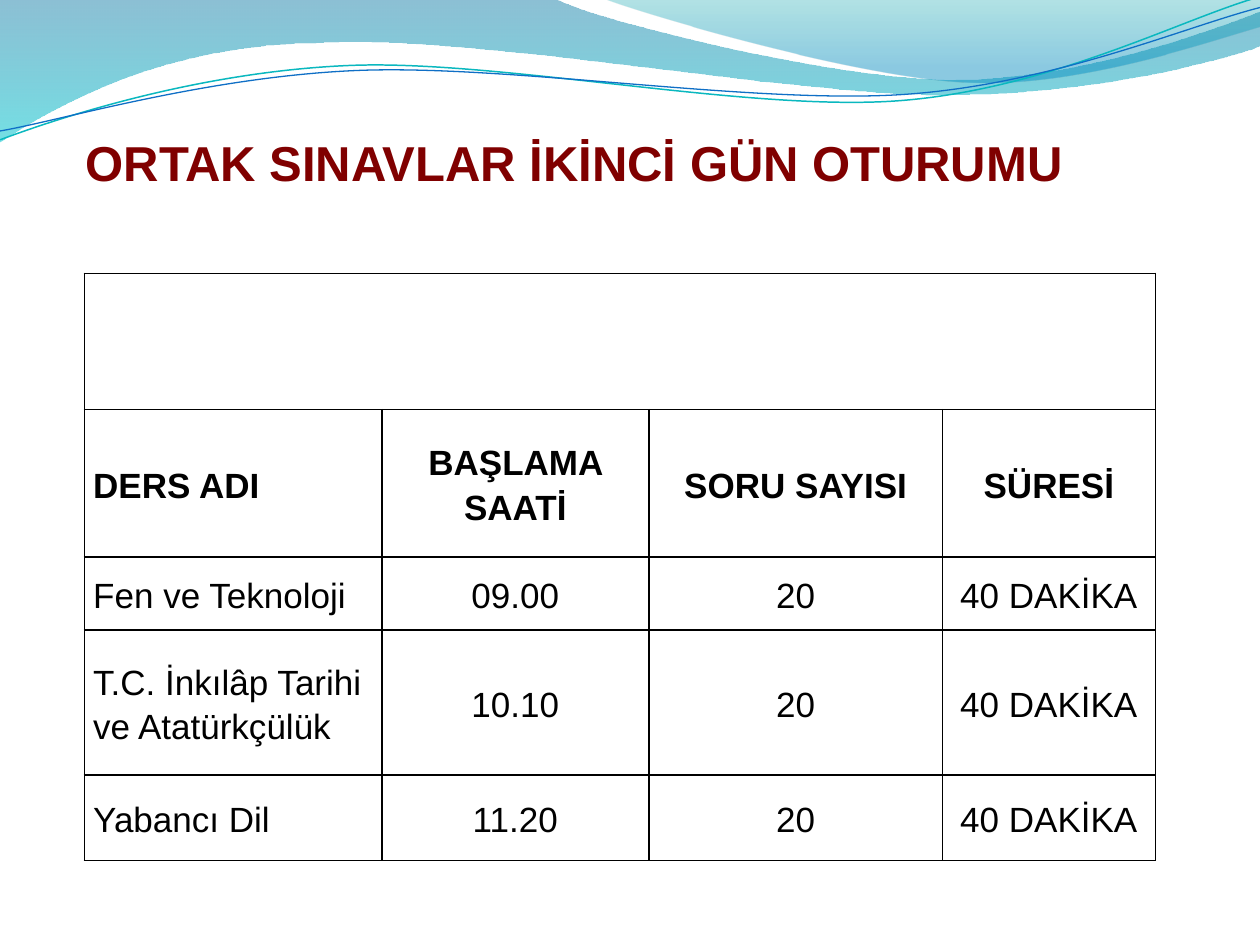
from dataclasses import dataclass
from math import cos, radians, sin

from lxml import etree
from pptx import Presentation
from pptx.dml.color import RGBColor
from pptx.enum.text import MSO_ANCHOR, MSO_AUTO_SIZE, PP_ALIGN
from pptx.oxml.ns import qn
from pptx.util import Inches, Pt

LEFT, CENTER = PP_ALIGN.LEFT, PP_ALIGN.CENTER
TOP, MIDDLE = MSO_ANCHOR.TOP, MSO_ANCHOR.MIDDLE
FIT_SHAPE = MSO_AUTO_SIZE.SHAPE_TO_FIT_TEXT
TITLE_ONLY = 5
CURVE_TILT = 357.3


@dataclass(frozen=True)
class Theme:
    font: str = "Arial"
    title_color: str = "800000"
    ink: str = "000000"
    teal_line: str = "0AB8BF"
    blue_line: str = "0F6FC6"
    wide_wave: tuple = ((0, "0074A1", 45), (1, "00C6CF", 55))
    right_wave: tuple = ((0, "00A1A9", 30), (0.8, "008BBF", 45))
    title_size: int = 28
    table_size: int = 20
    border: float = 1


WIDE_WAVE = [
    (0, -0.01), (4.4, -0.01),
    (4.76, 0.17, 6.64, 0.63, 7.58, 0.63), (8.53, 0.63, 9.58, 0.26, 10, 0.09),
    (10.01, 0.36),
    (9.83, 0.44, 8.7, 0.76, 7.46, 0.75), (6.22, 0.75, 3.82, 0.28, 2.57, 0.34),
    (1.29, 0.35, 0.46, 0.83, -0.01, 1.13), (0, -0.01),
]
RIGHT_WAVE = [
    (4.79, -0.01),
    (5.09, 0.11, 6.82, 0.62, 7.69, 0.65), (8.56, 0.69, 9.61, 0.32, 10, 0.21),
    (10, 0), (4.79, -0.01),
]
TEAL_CURVE = [
    (0, 1.11),
    (0.48, 0.93, 1.58, 0.57, 2.77, 0.52), (3.95, 0.47, 5.93, 0.89, 7.13, 0.8),
    (8.33, 0.71, 9.38, 0.15, 9.98, -0.02),
]
BLUE_CURVE = [
    (0, 1.04),
    (0.47, 0.96, 1.64, 0.61, 2.83, 0.56), (4.03, 0.51, 5.97, 0.83, 7.17, 0.75),
    (8.36, 0.67, 9.41, 0.21, 10, 0.06),
]
COLUMN_WIDTHS = [2.36, 2.12, 2.33, 1.69]
ROW_HEIGHTS = [1.08, 1.17, 0.58, 1.15, 0.68]
EXAM_ROWS = [
    ("DERS ADI", "BAŞLAMA SAATİ", "SORU SAYISI", "SÜRESİ"),
    ("Fen ve Teknoloji", "09.00", "20", "40 DAKİKA"),
    ("T.C. İnkılâp Tarihi ve Atatürkçülük", "10.10", "20", "40 DAKİKA"),
    ("Yabancı Dil", "11.20", "20", "40 DAKİKA"),
]


def level(steps, center):
    angle = radians(360 - CURVE_TILT)
    middle_x, middle_y = center
    result = []
    for step in steps:
        flat = []
        for x, y in zip(step[::2], step[1::2]):
            across, down = x - middle_x, y - middle_y
            flat.append(middle_x + across * cos(angle) - down * sin(angle))
            flat.append(middle_y + across * sin(angle) + down * cos(angle))
        result.append(tuple(flat))
    return result


class SlideBuilder:
    """Holds the theme and the current slide and draws each kind of element."""

    def __init__(self, slide, theme):
        self.slide = slide
        self.theme = theme

    def style(self, para, size, color, bold):
        para.font.name = self.theme.font
        para.font.size = Pt(size)
        para.font.bold = bold
        para.font.color.rgb = RGBColor.from_string(color)

    def outline(self, steps, close):
        points = [(Inches(step[-2]), Inches(step[-1])) for step in steps]
        builder = self.slide.shapes.build_freeform(*points[0])
        builder.add_line_segments(points[1:], close=close)
        shape = builder.convert_to_shape()
        shape.shadow.inherit = False
        segments = list(shape._element.spPr.iter(qn("a:lnTo")))
        for segment, step in zip(segments, steps[1:]):
            if len(step) == 2:
                continue
            bend = etree.Element(qn("a:cubicBezTo"))
            for x, y in zip(step[::2], step[1::2]):
                etree.SubElement(
                    bend, qn("a:pt"),
                    x=str(Inches(x) - shape.left), y=str(Inches(y) - shape.top),
                )
            segment.getparent().replace(segment, bend)
        return shape

    def wave(self, steps, stops):
        shape = self.outline(steps, True)
        shape.line.fill.background()
        shape.fill.gradient()
        shape.fill.gradient_angle = 270
        for stop, (position, color, _) in zip(shape.fill.gradient_stops, stops):
            stop.position = position
            stop.color.rgb = RGBColor.from_string(color)
        colors = shape._element.spPr.iter(qn("a:srgbClr"))
        for element, (_, _, opacity) in zip(colors, stops):
            etree.SubElement(element, qn("a:alpha"), val=str(opacity * 1000))

    def curve(self, steps, center, color, width):
        shape = self.outline(level(steps, center), False)
        shape.rotation = CURVE_TILT
        shape.fill.background()
        shape.line.color.rgb = RGBColor.from_string(color)
        shape.line.width = Pt(width)

    def title(self, text, left, top, width, height):
        box = self.slide.shapes.title
        box.left, box.top = Inches(left), Inches(top)
        box.width, box.height = Inches(width), Inches(height)
        frame = box.text_frame
        frame.text = text
        frame.word_wrap = True
        frame.auto_size = FIT_SHAPE
        frame.vertical_anchor = TOP
        para = frame.paragraphs[0]
        para.alignment = LEFT
        self.style(para, self.theme.title_size, self.theme.title_color, True)

    def cell_border(self, cell):
        properties = cell._tc.get_or_add_tcPr()
        for index, side in enumerate(("a:lnL", "a:lnR", "a:lnT", "a:lnB")):
            line = etree.Element(qn(side), w=str(Pt(self.theme.border)))
            fill = etree.SubElement(line, qn("a:solidFill"))
            etree.SubElement(fill, qn("a:srgbClr"), val=self.theme.ink)
            properties.insert(index, line)

    def table(self, rows, left, top, widths, heights):
        table = self.slide.shapes.add_table(
            len(heights), len(widths), Inches(left), Inches(top),
            Inches(sum(widths)), Inches(sum(heights)),
        ).table
        table.first_row = table.horz_banding = False
        for column, width in zip(table.columns, widths):
            column.width = Inches(width)
        for row, height in zip(table.rows, heights):
            row.height = Inches(height)
        for cell in table.iter_cells():
            cell.fill.background()
            self.cell_border(cell)
        table.cell(0, 0).merge(table.cell(0, len(widths) - 1))
        for row_index, texts in enumerate(rows, start=1):
            for column_index, text in enumerate(texts):
                cell = table.cell(row_index, column_index)
                cell.text = text
                cell.vertical_anchor = MIDDLE
                cell.margin_left = cell.margin_right = Inches(0.07)
                cell.margin_top = cell.margin_bottom = 0
                para = cell.text_frame.paragraphs[0]
                para.alignment = CENTER if column_index else LEFT
                para.line_spacing = 1.15
                self.style(para, self.theme.table_size, self.theme.ink, row_index == 1)


def main():
    deck = Presentation()
    deck.slide_width, deck.slide_height = Inches(10), Inches(7.5)
    theme = Theme()
    page = SlideBuilder(deck.slides.add_slide(deck.slide_layouts[TITLE_ONLY]), theme)
    page.wave(WIDE_WAVE, theme.wide_wave)
    page.wave(RIGHT_WAVE, theme.right_wave)
    page.curve(TEAL_CURVE, (4.99, 0.58), theme.teal_line, 0.85)
    page.curve(BLUE_CURVE, (5, 0.59), theme.blue_line, 0.75)
    page.table(EXAM_ROWS, 0.67, 2.17, COLUMN_WIDTHS, ROW_HEIGHTS)
    page.title("ORTAK SINAVLAR İKİNCİ GÜN OTURUMU", 0.58, 1, 8.58, 0.57)
    deck.save("out.pptx")


if __name__ == "__main__":
    main()
